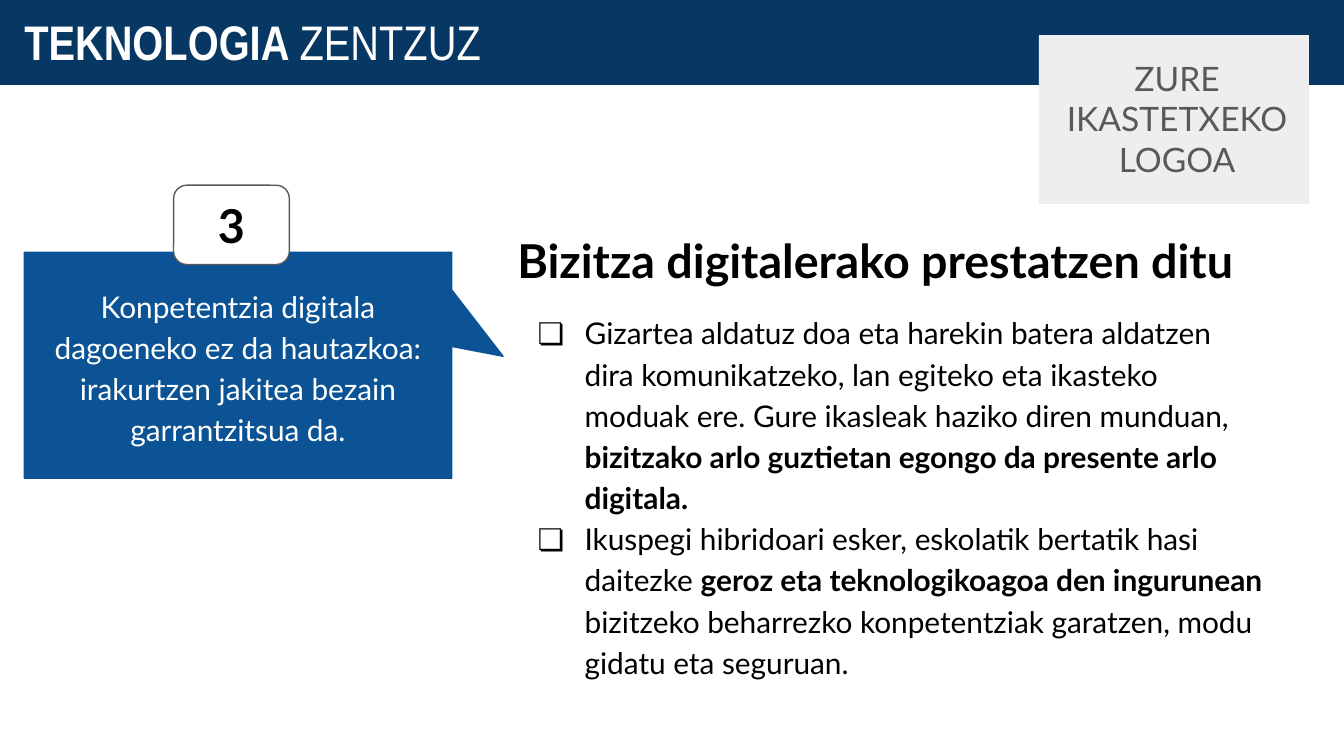
import pptx
import pptx.util
import pptx.dml.color
import pptx.enum.shapes
import pptx.enum.text
import pptx.oxml
import pptx.oxml.ns
from lxml import etree

Pt = pptx.util.Pt
SHAPE = pptx.enum.shapes.MSO_SHAPE
ALIGN = pptx.enum.text.PP_ALIGN
ANCHOR = pptx.enum.text.MSO_ANCHOR

COLORS = {
    "navy": "073763",
    "blue": "0B5394",
    "gray": "595959",
    "light": "EEEEEE",
    "white": "FFFFFF",
    "black": "000000",
}


def rgb(name):
    return pptx.dml.color.RGBColor.from_string(COLORS[name])


def set_attrs(obj, values):
    for name, value in values.items():
        setattr(obj, name, value)


def place(sp, box):
    set_attrs(sp, dict(zip(("left", "top", "width", "height"), map(Pt, box))))


def paint(sp, fill, line=None, width=0.75):
    sp.fill.solid()
    sp.fill.fore_color.rgb = rgb(fill)
    if line:
        sp.line.color.rgb = rgb(line)
        sp.line.width = Pt(width)
    else:
        sp.line.fill.background()


def setup_frame(sp, anchor, left=7.2):
    tf = sp.text_frame
    set_attrs(tf, {
        "word_wrap": True, "auto_size": pptx.enum.text.MSO_AUTO_SIZE.NONE,
        "vertical_anchor": anchor, "margin_left": Pt(left),
        "margin_right": Pt(7.2), "margin_top": Pt(7.2), "margin_bottom": Pt(7.2),
    })
    return tf


def write(p, runs, size, color, font="Lato", align=ALIGN.LEFT, spacing=1.0, before=0):
    """Fill a paragraph with (text, bold) runs."""
    set_attrs(p, {"alignment": align, "line_spacing": spacing,
                  "space_before": Pt(before), "space_after": Pt(0)})
    for text, bold in runs:
        r = p.add_run()
        r.text = text
        set_attrs(r.font, {"name": font, "size": Pt(size), "bold": bold})
        r.font.color.rgb = rgb(color)


def set_bullet(p, char=None, margin=0, indent=0):
    """Give a paragraph a bullet character, or none."""
    pPr = p._p.get_or_add_pPr()
    pPr.set("marL", str(Pt(margin)))
    pPr.set("indent", str(Pt(indent)))
    qn = pptx.oxml.ns.qn
    if char:
        color = etree.SubElement(pPr, qn("a:buClr"))
        etree.SubElement(color, qn("a:srgbClr")).set("val", COLORS["black"])
        etree.SubElement(pPr, qn("a:buFont")).set("typeface", "Lato")
        etree.SubElement(pPr, qn("a:buChar")).set("char", char)
    else:
        etree.SubElement(pPr, qn("a:buNone"))


def add_block(s, kind, box, fill, line=None):
    sp = s.shapes.add_shape(kind, *map(Pt, box))
    sp.shadow.inherit = False
    paint(sp, fill, line)
    return sp


def title_bar(s, box):
    sp = s.shapes.title
    place(sp, box)
    paint(sp, "navy", "navy", 1.5)
    tf = setup_frame(sp, ANCHOR.BOTTOM, left=13)
    write(tf.paragraphs[0], [("TEKNOLOGIA ", True), ("ZENTZUZ", False)],
          26, "white", font="Arial Narrow")


def body_text(s, box):
    sp = s.placeholders[1]
    place(sp, box)
    tf = setup_frame(sp, ANCHOR.TOP)

    # Heading
    p = tf.paragraphs[0]
    write(p, [("Bizitza digitalerako prestatzen ditu", True)], 25, "black",
          spacing=1.15, before=14)
    set_bullet(p)

    # Bulleted list
    items = [
        (12, [("Gizartea aldatuz doa eta harekin batera aldatzen dira komunikatzeko, "
               "lan egiteko eta ikasteko moduak ere. Gure ikasleak haziko diren munduan, ", False),
              ("bizitzako arlo guztietan egongo da presente arlo digitala.", True)]),
        (0, [("Ikuspegi hibridoari esker, eskolatik bertatik hasi daitezke ", False),
             ("geroz eta teknologikoagoa den ingurunean ", True),
             ("bizitzeko beharrezko konpetentziak garatzen, modu gidatu eta seguruan.", False)]),
    ]
    for before, runs in items:
        p = tf.add_paragraph()
        write(p, runs, 16, "black", spacing=1.15, before=before)
        set_bullet(p, "❏", 36, -25.2)


def numbered_callout(s, box):
    x, y, w, h = box

    # Speech bubble pointing at the list
    sp = add_block(s, SHAPE.ROUNDED_RECTANGULAR_CALLOUT, box, "blue", "blue")
    for i, value in enumerate((0.62, -0.04, 0)):
        sp.adjustments[i] = value
    tf = setup_frame(sp, ANCHOR.MIDDLE)
    write(tf.paragraphs[0],
          [("Konpetentzia digitala dagoeneko ez da hautazkoa: "
            "irakurtzen jakitea bezain garrantzitsua da.", False)],
          16, "white", align=ALIGN.CENTER, spacing=1.15, before=8)

    # Number badge on the top edge
    badge = (x + 80, y - 36, 62, 42.5)
    sp = add_block(s, SHAPE.ROUNDED_RECTANGLE, badge, "white", "gray")
    tf = setup_frame(sp, ANCHOR.MIDDLE)
    write(tf.paragraphs[0], [("3", True)], 25, "black", align=ALIGN.CENTER)


def logo_area(s, box):
    x, y, w, h = box
    add_block(s, SHAPE.RECTANGLE, box, "light")
    sp = s.shapes.add_textbox(*map(Pt, (x + 3.5, y + 5, w - 3.5, 57.6)))
    tf = setup_frame(sp, ANCHOR.TOP)
    write(tf.paragraphs[0], [("ZURE IKASTETXEKO LOGOA", False)], 18, "gray",
          align=ALIGN.CENTER)


def main():
    prs = pptx.Presentation()
    prs.slide_width, prs.slide_height = Pt(720), Pt(405)
    s = prs.slides.add_slide(prs.slide_layouts[1])
    title_bar(s, (0, 0, 720, 45))
    body_text(s, (270, 112.3, 416, 300))
    numbered_callout(s, (13, 135.2, 229, 121))
    logo_area(s, (556.5, 18.8, 144.7, 90.5))
    prs.save("out.pptx")


if __name__ == "__main__":
    main()
